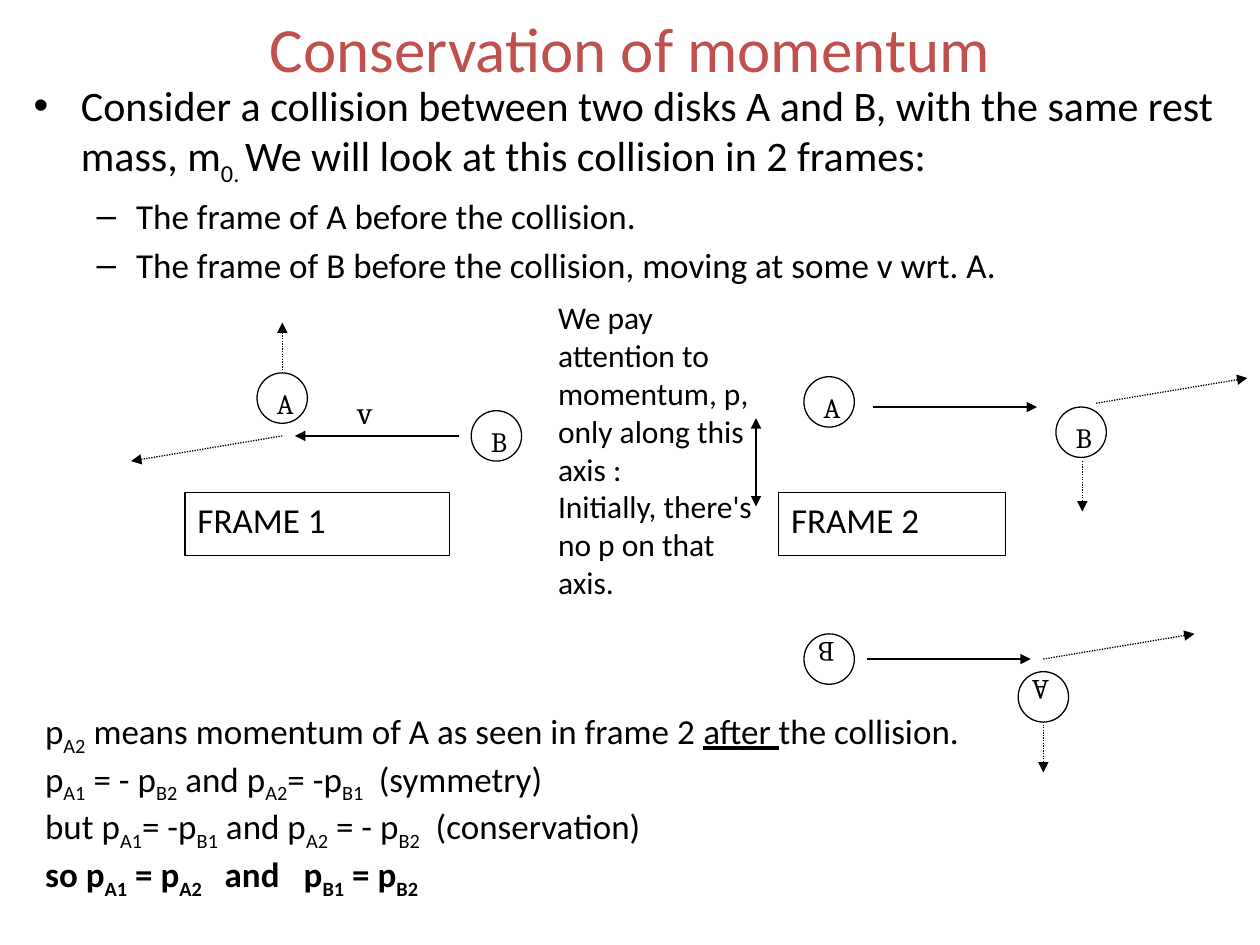
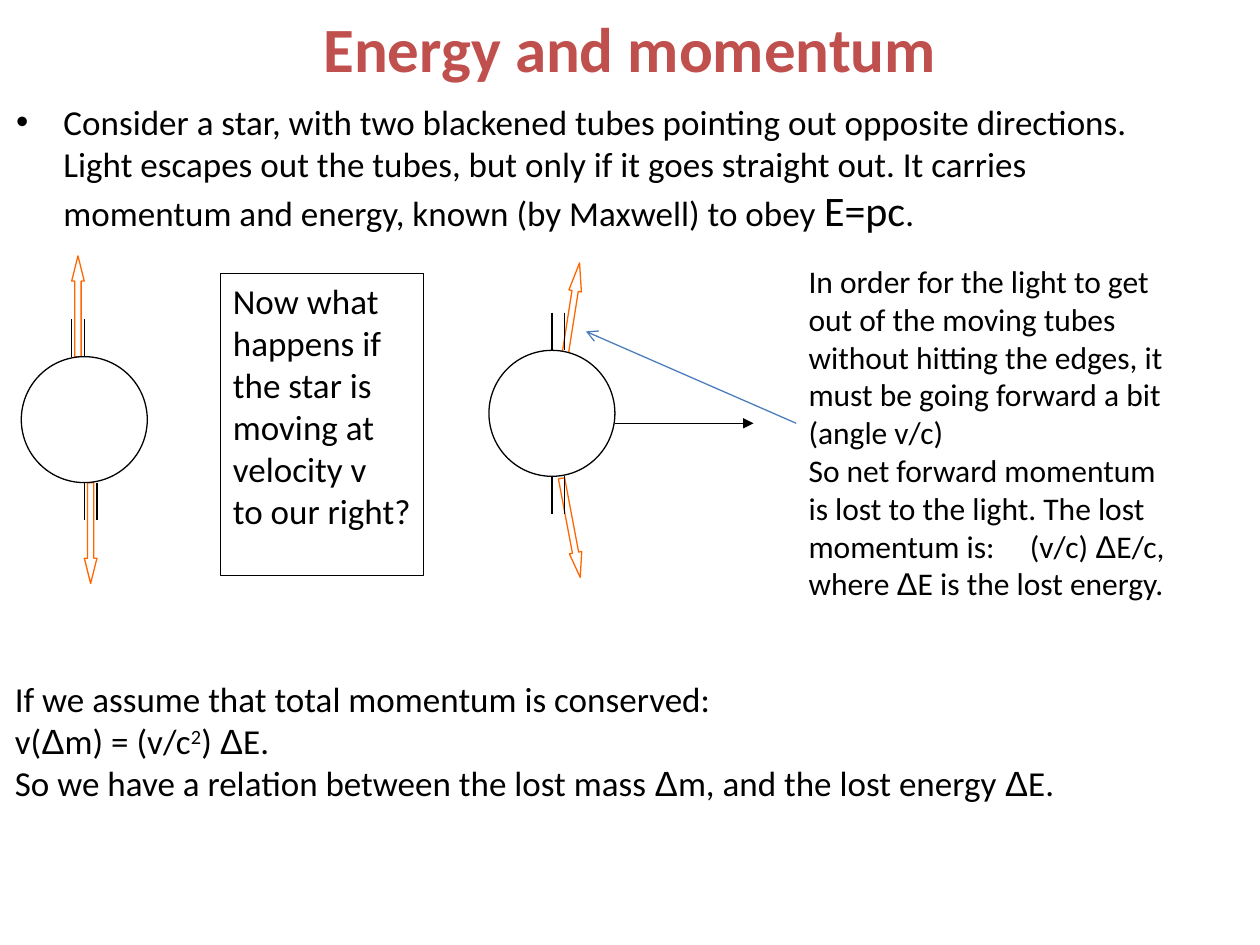
from itertools import groupby

from lxml import etree
from pptx import Presentation, util as u
from pptx.dml.color import RGBColor
from pptx.enum import dml, shapes, text
from pptx.oxml.ns import qn

BLACK = RGBColor(0x00, 0x00, 0x00)
WHITE = RGBColor(0xFF, 0xFF, 0xFF)
BRICK = RGBColor(0xC0, 0x50, 0x4D)
ORANGE = RGBColor(0xFF, 0x66, 0x00)
BLUE = RGBColor(0x4B, 0x7E, 0xBC)

BODY_FONT, LABEL_FONT, SYMBOL_FONT = "Calibri", "Cambria", "Arial"
LINE_WIDTH = 0.75
DISK = 28.8
STAR = 72

# Each mark switches its format on, and the next one switches it off.
MARKS = {
    "|": {"baseline": "-25000"},
    "^": {"baseline": "30000"},
    "_": {"underline": True},
    "~": {"size": u.Pt(24)},
}
# Bullet sign, left margin and hanging indent for each level.
BULLETS = [("•", 27, 27), ("–", 58.5, 22.5)]

# Places are offsets from the point where the disks meet.
HEAD_ON = {
    "disks": {"A": (0, -21.6), "B": (122.4, 0)},
    "velocity": ((100.8, 0), (7.2, 0)),
    "rebounds": [((0, -36), (0, -64.8)), ((0, 0), (-86.4, 14.4))],
}
FROM_B = {
    "disks": {"A": (-144, -0.7), "B": (0, 16.6)},
    "velocity": ((-118.8, 2.2), (-25.2, 2.2)),
    "rebounds": [((0.7, 33.1), (0.7, 61.9)), ((8.6, 0), (95, -14.4))],
}


def set_all(target, values):
    for name, value in values.items():
        setattr(target, name, value)


def add_child(parent, tag, **attributes):
    return etree.SubElement(parent, qn(tag), attributes)


def write_spans(para, marked, font):
    """Turn marked text into runs, with delta signs in the symbol font."""
    active = None
    for sign, chars in groupby(marked, lambda c: c if c in MARKS or c in "Δ\n" else ""):
        if sign in MARKS:
            active = None if active else sign
        elif sign == "\n":
            para.add_line_break()
        else:
            span = para.add_run()
            span.text = "".join(chars)
            values = {**font, **MARKS.get(active, {})}
            if sign == "Δ":
                values["name"] = SYMBOL_FONT
            baseline = values.pop("baseline", None)
            color = values.pop("color", BLACK)
            set_all(span.font, values)
            span.font.color.rgb = color
            if baseline:
                span._r.get_or_add_rPr().set("baseline", baseline)


def write_para(frame, number, marked, align=text.PP_ALIGN.LEFT, tabs=(), **font):
    """Write one paragraph; font size is in points, tabs are distances in points."""
    para = frame.paragraphs[0] if number == 0 else frame.add_paragraph()
    para.alignment = align
    font = {"name": BODY_FONT, **font, "size": u.Pt(font["size"])}
    write_spans(para, marked, font)
    if tabs:
        stops = add_child(para._p.get_or_add_pPr(), "a:tabLst")
        for place in tabs:
            add_child(stops, "a:tab", pos=str(u.Pt(place)), algn="l")
    return para


def add_text(page, place, paras, anchor=text.MSO_ANCHOR.TOP, **font):
    """Add a text box; each paragraph is marked text or a (marked, options) pair."""
    box = page.shapes.add_textbox(*map(u.Pt, place))
    set_all(box.text_frame, {"word_wrap": True, "vertical_anchor": anchor})
    for number, item in enumerate(paras):
        marked, options = (item, {}) if isinstance(item, str) else item
        write_para(box.text_frame, number, marked, **{**font, **options})


def add_title(page, title, bold=False):
    add_text(page, (36, 0, 648, 54), [title], text.MSO_ANCHOR.MIDDLE,
             align=text.PP_ALIGN.CENTER, size=36, bold=bold, color=BRICK)


def add_bullets(page, place, items):
    """Add bulleted paragraphs given as (level, size, marked text)."""
    box = page.shapes.add_textbox(*map(u.Pt, place))
    box.text_frame.word_wrap = True
    for number, (level, size, marked) in enumerate(items):
        para = write_para(box.text_frame, number, marked, size=size)
        set_all(para, {"level": level, "space_before": u.Pt(size * 0.2)})
        sign, margin, hang = BULLETS[level]
        props = para._p.get_or_add_pPr()
        props.set("marL", str(u.Pt(margin)))
        props.set("indent", str(-u.Pt(hang)))
        add_child(props, "a:buFont", typeface=SYMBOL_FONT)
        add_child(props, "a:buChar", char=sign)


def add_figure(page, kind, place, label="", line=BLACK, turn=0, **font):
    """Add a white shape with an optional outline and label."""
    shape = page.shapes.add_shape(kind, *map(u.Pt, place))
    shape.shadow.inherit = False
    shape.rotation = turn
    shape.fill.solid()
    shape.fill.fore_color.rgb = WHITE
    if line is None:
        shape.line.fill.background()
    else:
        shape.line.color.rgb = line
        shape.line.width = u.Pt(LINE_WIDTH)
    if label:
        set_all(shape.text_frame, {"word_wrap": True, "vertical_anchor": text.MSO_ANCHOR.TOP})
        write_para(shape.text_frame, 0, label, **font)
    return shape


def add_frame_label(page, place, label):
    add_figure(page, shapes.MSO_SHAPE.RECTANGLE, place, label, size=20)


def add_line(page, start, end, color=BLACK, dotted=False, head=None, tail=None):
    line = page.shapes.add_connector(
        shapes.MSO_CONNECTOR.STRAIGHT, *map(u.Pt, (*start, *end)))
    line.line.color.rgb = color
    line.line.width = u.Pt(LINE_WIDTH)
    if dotted:
        line.line.dash_style = dml.MSO_LINE.ROUND_DOT
    outline = line.line._get_or_add_ln()
    for tag, style in (("a:headEnd", head), ("a:tailEnd", tail)):
        if style:
            add_child(outline, tag, type=style)
    add_child(line._element.spPr, "a:effectLst")


def add_collision(page, meeting, scene, turned=False):
    """Draw disks and motion arrows around the meeting point, or turned by half."""
    side = -1 if turned else 1

    def locate(offset):
        return tuple(m + side * o for m, o in zip(meeting, offset))

    for name, offset in scene["disks"].items():
        x, y = locate(offset)
        add_figure(page, shapes.MSO_SHAPE.OVAL,
                   (x - DISK / 2, y - DISK / 2, DISK, DISK), name,
                   turn=180 if turned else 0, name=LABEL_FONT, size=16)
    add_line(page, *map(locate, scene["velocity"]), tail="triangle")
    for ends in scene["rebounds"]:
        add_line(page, *map(locate, ends), dotted=True, tail="triangle")


def add_star(page, left, top, tubes, beams):
    """Draw a star; tubes are (x, y) starts, beams are (x, y, length, turn)."""
    for x, y, length, turn in beams:
        beam = add_figure(page, shapes.MSO_SHAPE.RIGHT_ARROW,
                          (left + x, top + y, length, 7.2), line=ORANGE, turn=turn)
        beam.adjustments[0] = 0.5
        beam.adjustments[1] = length / 28.8
    add_figure(page, shapes.MSO_SHAPE.OVAL, (left, top, STAR, STAR))
    for x, y in tubes:
        for wall in (x, x + 7.2):
            add_line(page, (left + wall, top + y), (left + wall, top + y + 21.6))


def build_collision_page(page):
    add_title(page, "Conservation of momentum")
    add_bullets(page, (12.2, 41.8, 696.2, 144), [
        (0, 24, "Consider a collision between two disks A and B, with the same rest "
                "mass, m|0. |We will look at this collision in 2 frames:"),
        (1, 20, "The frame of A before the collision."),
        (1, 20, "The frame of B before the collision, moving at some v wrt. A."),
    ])
    add_collision(page, (161.3, 249.1), HEAD_ON)
    add_figure(page, shapes.MSO_SHAPE.RECTANGLE, (197.3, 221, 36, 21.6), "v",
               line=None, name=LABEL_FONT, size=18)
    add_frame_label(page, (105.8, 281.5, 151.2, 36), "FRAME 1")
    add_frame_label(page, (445, 281.5, 129.6, 36), "FRAME 2")
    add_collision(page, (617.8, 230.4), FROM_B)
    add_collision(page, (596.2, 376.6), HEAD_ON, turned=True)
    add_text(page, (311.8, 167, 132.5, 181.4), [
        "We pay attention to momentum, p, only along this axis :",
        "Initially, there's no p on that axis.",
    ], size=18)
    add_line(page, (432, 239), (432, 289.4), head="triangle", tail="triangle")
    add_text(page, (18.7, 401.8, 563.8, 104.4), [
        "p|A2| means momentum of A as seen in frame 2 _after _the collision.",
        ("p|A1| = - p|B2| and p|A2|= -p|B1|\t(symmetry)", {"tabs": [190.7]}),
        ("but p|A1|= -p|B1| and p|A2| = - p|B2|\t(conservation)", {"tabs": [223.2]}),
        ("so p|A1| = p|A2|\tand\tp|B1| = p|B2|", {"tabs": [102.6, 147.8], "bold": True}),
    ], size=20)


def build_star_page(page):
    add_title(page, "Energy and momentum", bold=True)
    add_bullets(page, (2.2, 54, 671.8, 84.2), [
        (0, 20, "Consider a star, with two blackened tubes pointing out opposite "
                "directions. Light escapes out the tubes, but only if it goes straight "
                "out. It carries momentum and energy, known (by Maxwell) to obey ~E=pc~."),
    ])
    add_frame_label(page, (126, 156.2, 115.9, 172.8),
                    "Now what happens if the star is moving at velocity v \nto our right?")
    add_star(page, 12.2, 203.8, tubes=[(28.8, -21.6), (36, STAR)],
             beams=[(3.6, -32.4, 57.6, 270), (10.8, 97.2, 57.6, 90)])
    add_star(page, 279.4, 200.2, tubes=[(36, -21.6), (36, STAR)],
             beams=[(14.4, -21.6, 64.8, 278.9), (18, 97.9, 57.6, 79.3)])
    add_line(page, (351.4, 241.9), (430.6, 241.9), tail="triangle")
    add_text(page, (455, 146.2, 218.9, 227.5), [
        "In order for the light to get out of the moving tubes without hitting the "
        "edges, it must be going forward a bit (angle v/c)",
        ("So net forward momentum is lost to the light. The lost momentum is:"
         "\t(v/c) ΔE/c, where ΔE is the lost energy.", {"tabs": [126.5]}),
    ], size=18)
    add_line(page, (455, 241.9), (334.8, 189.4), color=BLUE, tail="arrow")
    add_text(page, (1.4, 383.8, 718.6, 79.9), [
        "If we assume that total momentum is conserved:",
        "v(Δm) = (v/c^2^) ΔE.",
        "So we have a relation between the lost mass Δm, and the lost energy ΔE.",
    ], size=20)


def main():
    deck = Presentation()
    set_all(deck, {"slide_width": u.Pt(720), "slide_height": u.Pt(540)})
    for build in (build_collision_page, build_star_page):
        build(deck.slides.add_slide(deck.slide_layouts[6]))
    deck.save("out.pptx")


if __name__ == "__main__":
    main()
